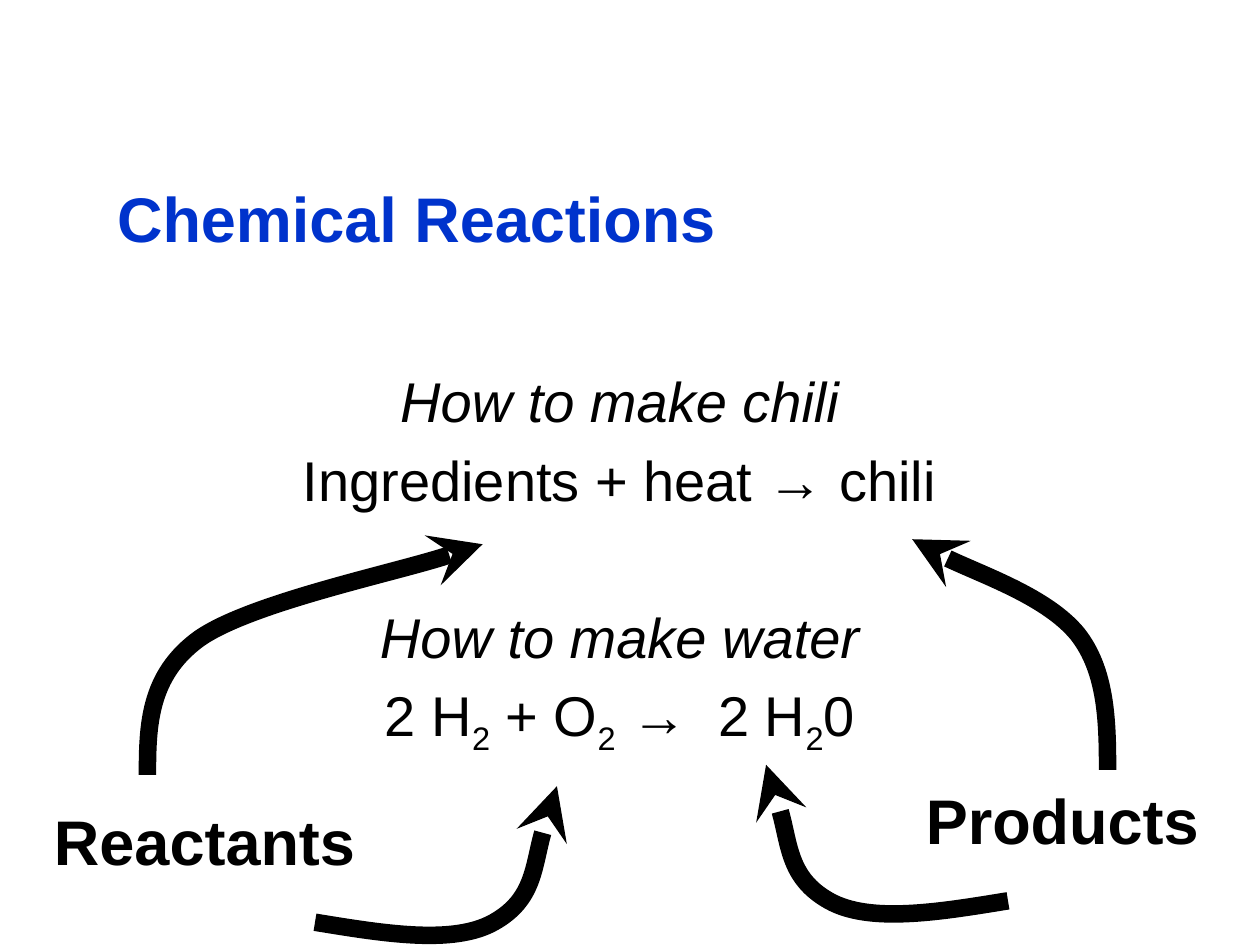
import lxml.etree
import pptx
import pptx.dml.color
import pptx.enum.shapes
import pptx.enum.text
import pptx.oxml.ns
import pptx.util

Inches = pptx.util.Inches
Pt = pptx.util.Pt
Align = pptx.enum.text.PP_ALIGN
Anchor = pptx.enum.text.MSO_ANCHOR

THEME = {
    "font": "Arial",
    "title": "0033CC",
    "ink": "000000",
    "heading_size": 36,
    "body_size": 32,
    "arrow_width": 10,
}

TITLE = ("Chemical Reactions", (0.83, 0.83, 8.67, 1.25))
TITLE_ROUNDING = 0.217
# The rounded corners already inset the text by 0.08 inches
TITLE_SIDE_MARGIN = 0.02
TITLE_BOTTOM_MARGIN = -0.03
BODY_BOX = (0.42, 2.24, 9, 4.95)
BODY_TOP_MARGIN = 0.67
# Text with subscripts between underscores, italic, points of space before
BODY_LINES = [
    ("How to make chili", True, 0),
    ("Ingredients + heat → chili", False, 6.4),
    ("How to make water", True, 51.4),
    ("2 H_2_ + O_2_ →  2 H_2_0", False, 6.4),
]
LABELS = [
    ("Reactants", (0.33, 6.32, 2.59, 0.7)),
    ("Products", (7.25, 6.15, 2.37, 0.7)),
]
# Start point, then three points for each Bézier segment
REACTANT_ARROWS = [
    [
        (1.17, 6.15),
        (1.17, 5.76), (1.18, 5.36), (1.58, 5.07),
        (1.99, 4.78), (3.21, 4.53), (3.58, 4.4),
        (3.96, 4.28), (3.9, 4.3), (3.83, 4.32),
    ],
    [
        (2.5, 7.32),
        (3.05, 7.41), (3.6, 7.5), (3.92, 7.32),
        (4.24, 7.14), (4.33, 6.42), (4.42, 6.24),
    ],
]
PRODUCT_ARROWS = [
    [
        (8.79, 6.11),
        (8.79, 5.72), (8.78, 5.32), (8.55, 5.03),
        (8.31, 4.74), (7.6, 4.49), (7.38, 4.36),
        (7.17, 4.24), (7.2, 4.26), (7.24, 4.28),
    ],
    [
        (8, 7.15),
        (7.45, 7.24), (6.9, 7.33), (6.58, 7.15),
        (6.26, 6.97), (6.17, 6.25), (6.08, 6.07),
    ],
]


def rgb(name):
    return pptx.dml.color.RGBColor.from_string(THEME[name])


def add_text(paragraph, text, size="heading_size", color="ink", bold=False, italic=False):
    """Fill a paragraph; parts between underscores become subscripts."""
    for index, part in enumerate(text.split("_")):
        run = paragraph.add_run()
        run.text = part
        font = run.font
        font.name = THEME["font"]
        font.size = Pt(THEME[size])
        font.color.rgb = rgb(color)
        font.bold = bold
        font.italic = italic
        if index % 2:
            font._element.set("baseline", "-25000")


def add_box(slide, box, wrap=True):
    frame = slide.shapes.add_textbox(*map(Inches, box)).text_frame
    frame.word_wrap = wrap
    return frame


def add_title(slide, text, box):
    shape = slide.shapes.add_shape(
        pptx.enum.shapes.MSO_SHAPE.ROUNDED_RECTANGLE, *map(Inches, box)
    )
    shape.adjustments[0] = TITLE_ROUNDING
    shape.shadow.inherit = False
    shape.fill.background()
    shape.line.fill.background()
    frame = shape.text_frame
    frame.word_wrap = True
    frame.vertical_anchor = Anchor.BOTTOM
    frame.margin_left = frame.margin_right = Inches(TITLE_SIDE_MARGIN)
    frame.margin_bottom = Inches(TITLE_BOTTOM_MARGIN)
    paragraph = frame.paragraphs[0]
    paragraph.alignment = Align.LEFT
    paragraph.line_spacing = 0.9
    add_text(paragraph, text, color="title", bold=True)


def add_curved_arrow(slide, points):
    """Draw the points as a polyline, then turn each three lines into a Bézier."""
    start, *rest = [(Inches(x), Inches(y)) for x, y in points]
    builder = slide.shapes.build_freeform(*start)
    builder.add_line_segments(rest, close=False)
    shape = builder.convert_to_shape()
    shape.shadow.inherit = False
    shape.fill.background()
    shape.line.color.rgb = rgb("ink")
    shape.line.width = Pt(THEME["arrow_width"])

    qn = pptx.oxml.ns.qn
    lines = list(shape._element.iter(qn("a:lnTo")))
    for first in range(0, len(lines), 3):
        curve = lxml.etree.Element(qn("a:cubicBezTo"))
        lines[first].addprevious(curve)
        for line in lines[first:first + 3]:
            curve.append(line[0])
            line.getparent().remove(line)
    outline = shape.line._get_or_add_ln()
    lxml.etree.SubElement(outline, qn("a:tailEnd"), type="stealth")


def main():
    presentation = pptx.Presentation()
    presentation.slide_width = Inches(10)
    presentation.slide_height = Inches(7.5)
    slide = presentation.slides.add_slide(presentation.slide_layouts[6])

    add_title(slide, *TITLE)

    body = add_box(slide, BODY_BOX)
    body.margin_top = Inches(BODY_TOP_MARGIN)
    for index, (text, italic, space) in enumerate(BODY_LINES):
        paragraph = body.add_paragraph() if index else body.paragraphs[0]
        paragraph.alignment = Align.CENTER
        paragraph.space_before = Pt(space)
        add_text(paragraph, text, size="body_size", italic=italic)

    for (text, box), arrows in zip(LABELS, (REACTANT_ARROWS, PRODUCT_ARROWS)):
        for points in arrows:
            add_curved_arrow(slide, points)
        add_text(add_box(slide, box, wrap=False).paragraphs[0], text, bold=True)

    presentation.save("out.pptx")


if __name__ == "__main__":
    main()
